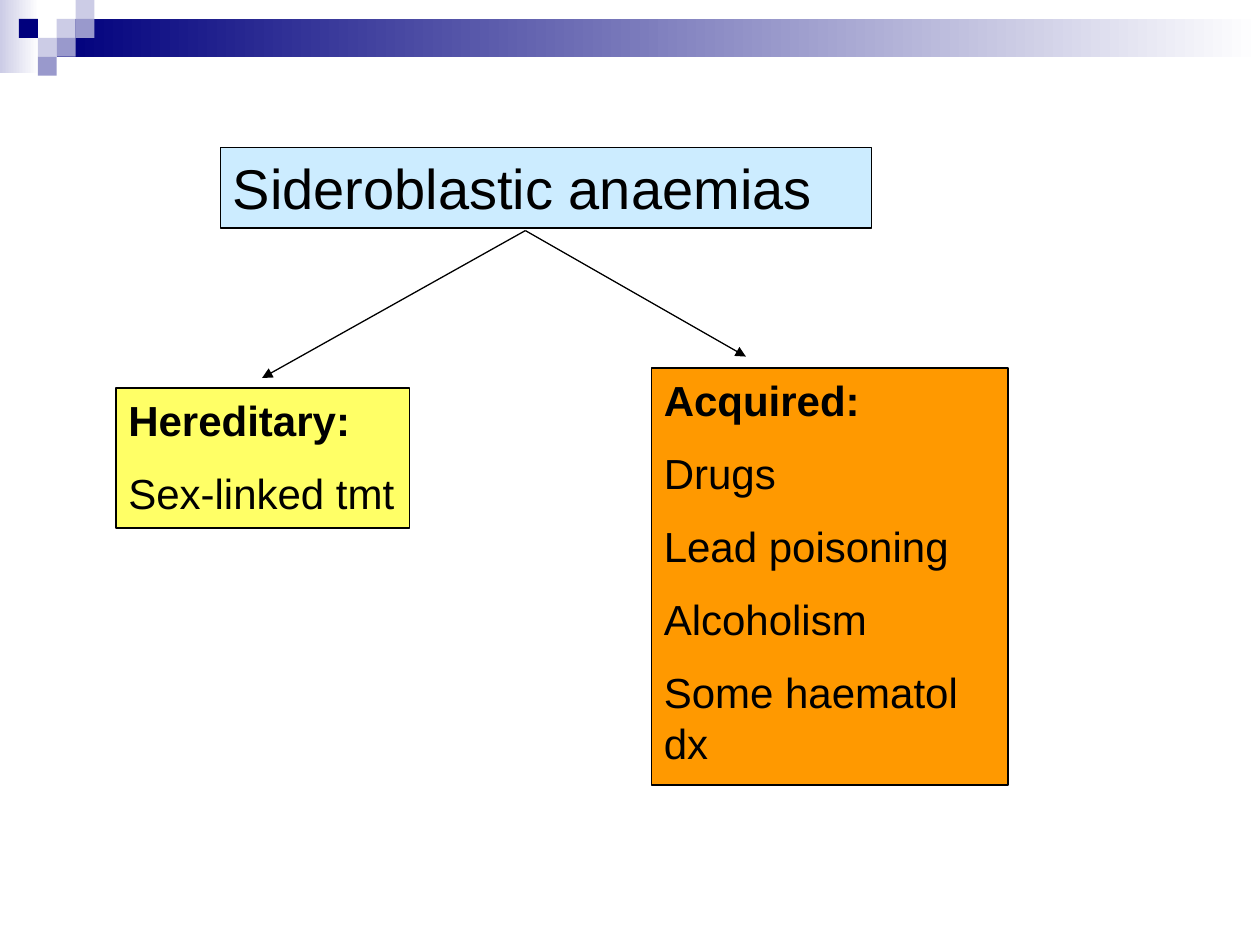
import pptx
import pptx.util
import pptx.dml.color
import pptx.enum.shapes
import pptx.enum.text
import pptx.oxml
import pptx.oxml.ns
from pptx.util import Inches

RGBColor = pptx.dml.color.RGBColor
BLACK = RGBColor(0x00, 0x00, 0x00)
WHITE = RGBColor(0xFF, 0xFF, 0xFF)
NAVY = RGBColor(0x00, 0x00, 0x7D)
LAVENDER = RGBColor(0xCC, 0xCC, 0xE6)
PERIWINKLE = RGBColor(0x99, 0x99, 0xCC)
PALE_BLUE = RGBColor(0xCC, 0xEC, 0xFF)
YELLOW = RGBColor(0xFF, 0xFF, 0x66)
ORANGE = RGBColor(0xFF, 0x99, 0x00)

TILE = 0.15
TILES = [
    (3, 1, LAVENDER), (4, 0, LAVENDER), (4, 1, PERIWINKLE),
    (2, 2, LAVENDER), (1, 1, NAVY), (3, 2, PERIWINKLE),
    (2, 3, PERIWINKLE),
]


def apply_format(target, values):
    for name, value in values.items():
        setattr(target, name, value)


def add_block(slide, left, top, width, height):
    block = slide.shapes.add_shape(
        pptx.enum.shapes.MSO_SHAPE.RECTANGLE,
        Inches(left), Inches(top), Inches(width), Inches(height))
    block.shadow.inherit = False
    block.line.fill.background()
    return block


def add_tile(slide, column, row, color):
    tile = add_block(slide, column * TILE, row * TILE, TILE, TILE)
    tile.fill.solid()
    tile.fill.fore_color.rgb = color


def add_fade(slide, bounds, start_color):
    fade = add_block(slide, *bounds)
    fade.fill.gradient()
    fade.fill.gradient_angle = 0
    for stop, color, position in zip(
            fade.fill.gradient_stops, (start_color, WHITE), (0, 1)):
        stop.color.rgb = color
        stop.position = position


def add_category(slide, bounds, color, lines, size, heading=False):
    category = slide.shapes.add_textbox(*map(Inches, bounds))
    category.fill.solid()
    category.fill.fore_color.rgb = color
    category.line.color.rgb = BLACK
    category.line.width = pptx.util.Pt(0.75)
    frame = category.text_frame
    apply_format(frame, {
        "word_wrap": True,
        "auto_size": pptx.enum.text.MSO_AUTO_SIZE.NONE,
        "vertical_anchor": pptx.enum.text.MSO_ANCHOR.TOP,
    })
    for index, line in enumerate(lines):
        paragraph = frame.add_paragraph() if index else frame.paragraphs[0]
        paragraph.space_before = pptx.util.Pt(13)
        run = paragraph.add_run()
        run.text = line
        apply_format(run.font, {
            "name": "Arial",
            "size": pptx.util.Pt(size),
            "bold": heading and index == 0,
        })
        run.font.color.rgb = BLACK


def add_arrow(slide, start, end):
    arrow = slide.shapes.add_connector(
        pptx.enum.shapes.MSO_CONNECTOR.STRAIGHT, *map(Inches, start + end))
    arrow.line.color.rgb = BLACK
    arrow.line.width = pptx.util.Pt(0.75)
    head = pptx.oxml.parse_xml(
        f'<a:tailEnd {pptx.oxml.ns.nsdecls("a")} type="triangle"/>')
    arrow.line._get_or_add_ln().append(head)
    arrow._element.spPr.append(pptx.oxml.parse_xml(
        f'<a:effectLst {pptx.oxml.ns.nsdecls("a")}/>'))


def main():
    presentation = pptx.Presentation()
    apply_format(presentation, {
        "slide_width": Inches(10), "slide_height": Inches(7.5)})
    slide = presentation.slides.add_slide(presentation.slide_layouts[6])

    add_fade(slide, (0, 0, 0.31, 0.58), LAVENDER)
    add_fade(slide, (0.45, 0.15, 9.55, 0.3), NAVY)
    for column, row, color in TILES:
        add_tile(slide, column, row, color)

    add_category(slide, (1.75, 1.17, 5.17, 0.64), PALE_BLUE,
                 ["Sideroblastic anaemias"], 32)
    for target in ((2.08, 3), (5.92, 2.83)):
        add_arrow(slide, (4.17, 1.83), target)
    add_category(slide, (0.92, 3.08, 2.33, 1.11), YELLOW,
                 ["Hereditary:", "Sex-linked tmt"], 24, heading=True)
    add_category(slide, (5.17, 2.92, 2.83, 3.31), ORANGE,
                 ["Acquired:", "Drugs", "Lead poisoning", "Alcoholism",
                  "Some haematol dx"], 24, heading=True)

    presentation.save("out.pptx")


if __name__ == "__main__":
    main()
